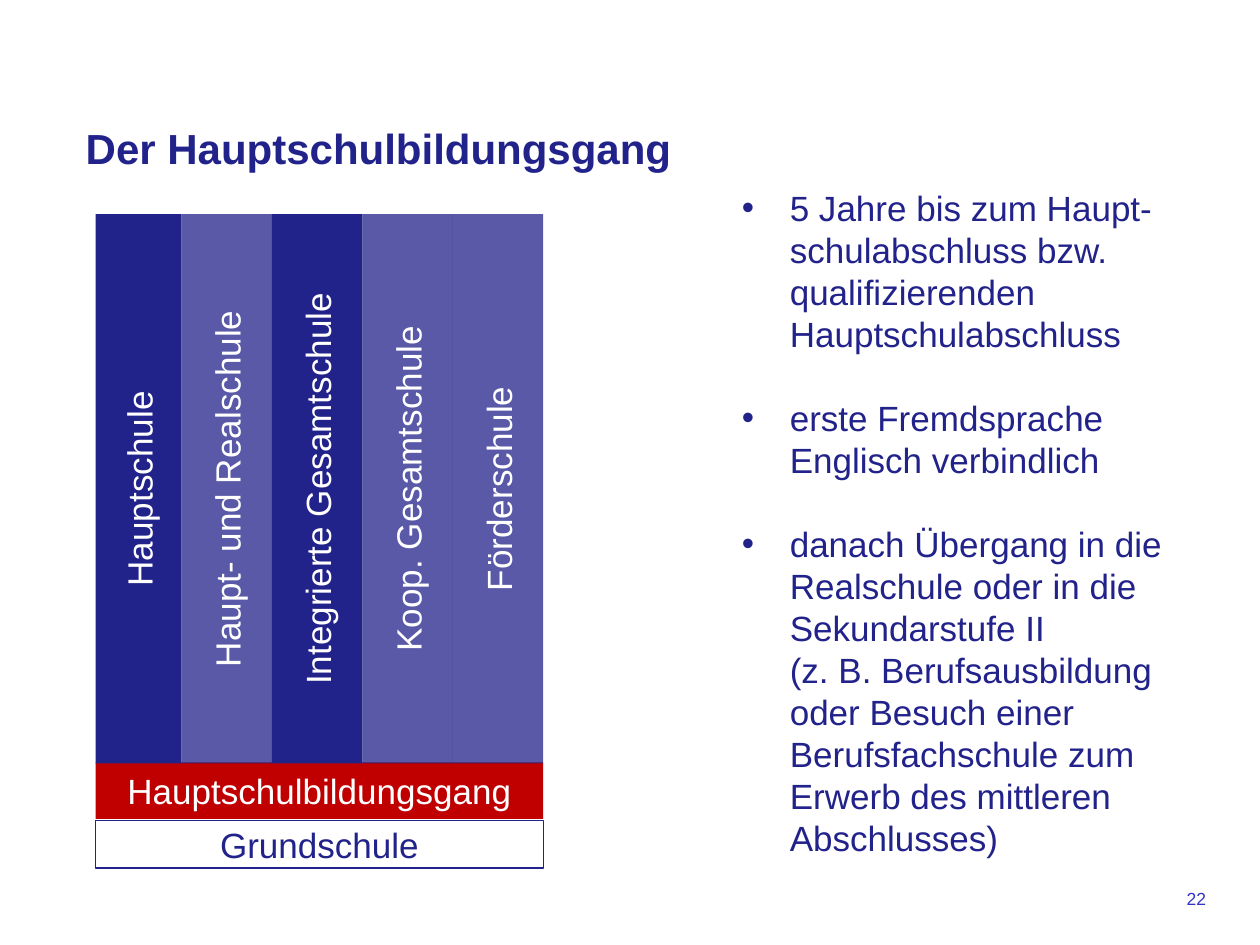
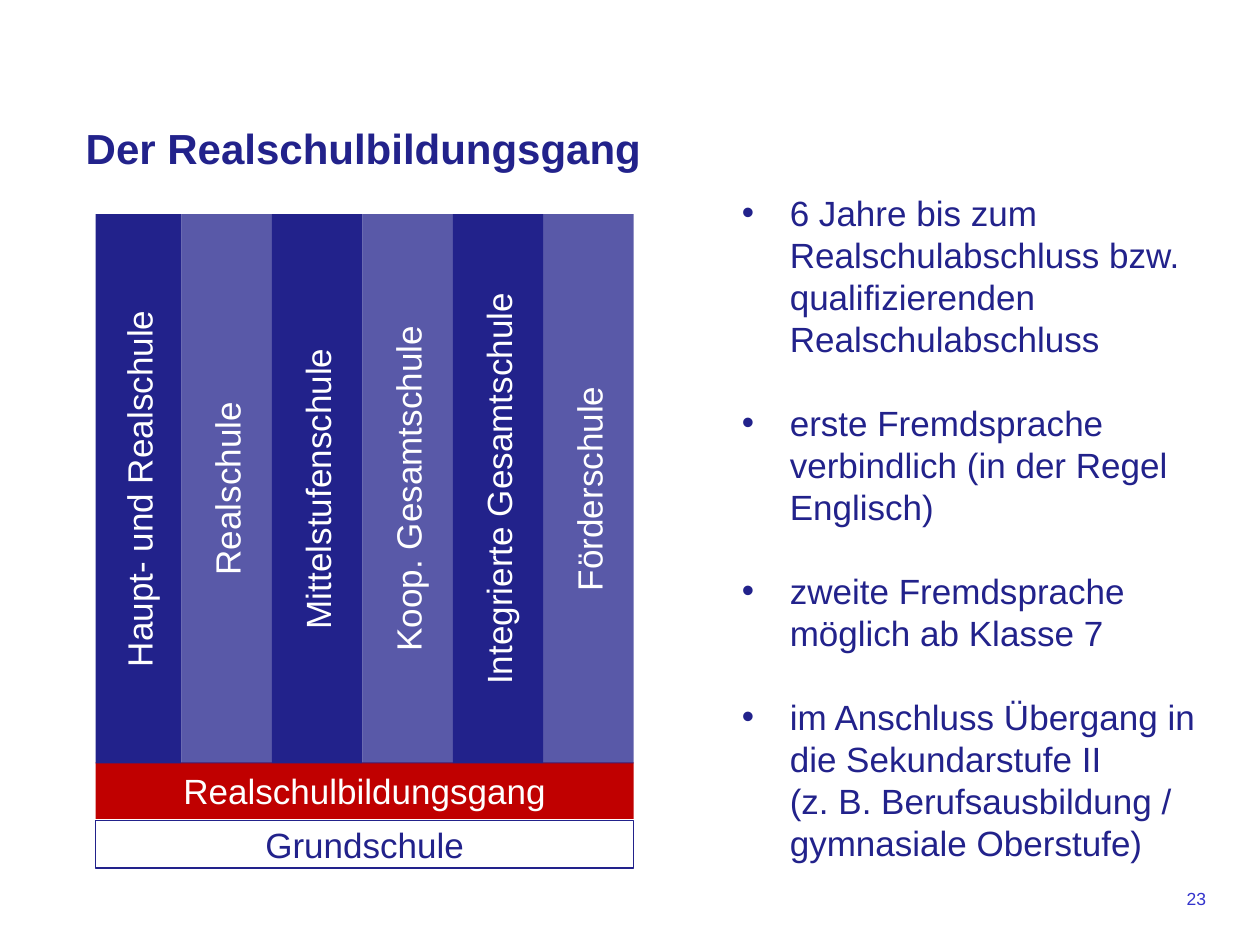
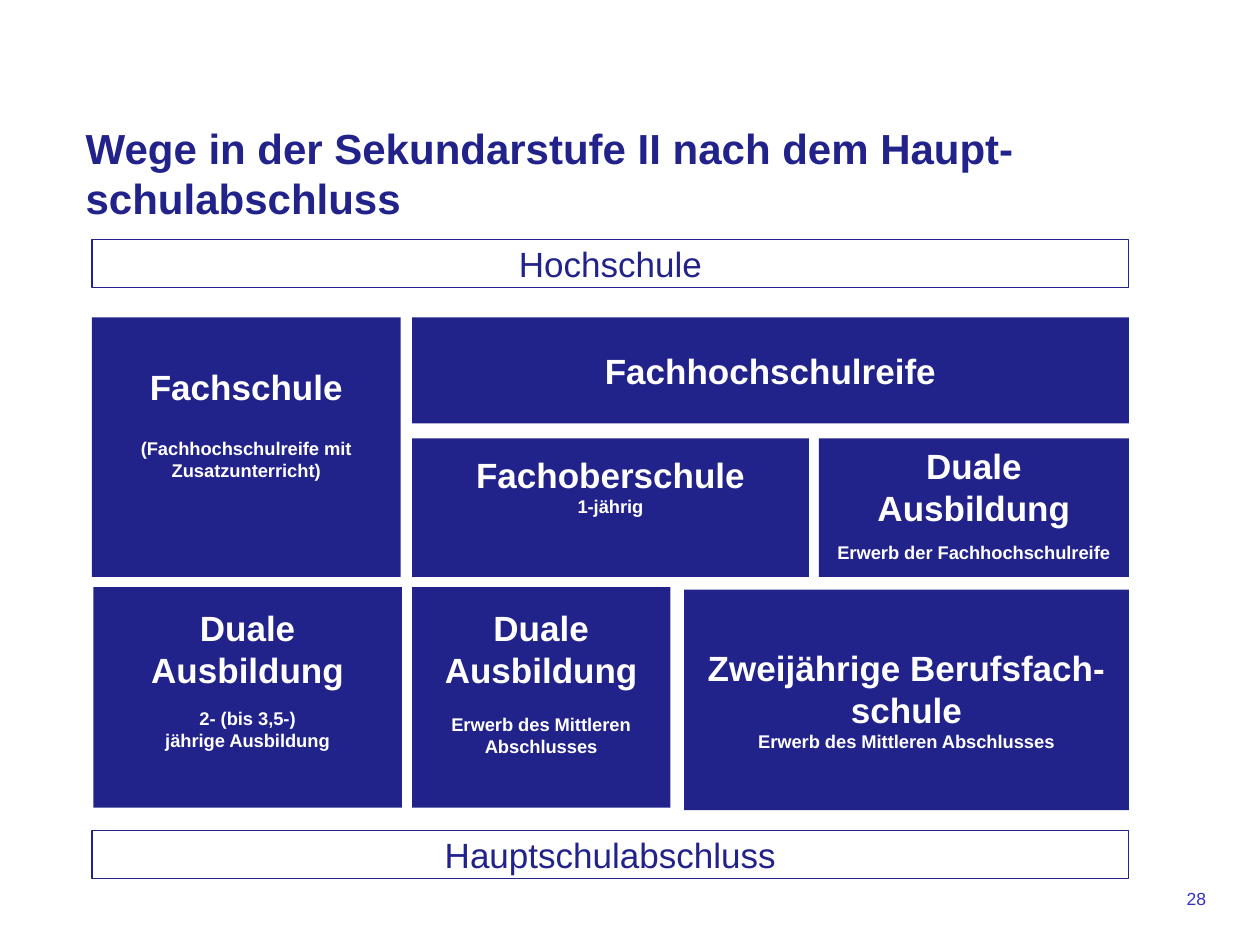
"""Build three slides on German secondary school courses and the paths after them."""

from dataclasses import dataclass

from lxml.etree import SubElement
from pptx import Presentation
from pptx.dml.color import RGBColor
from pptx.enum.shapes import MSO_SHAPE
from pptx.enum.text import MSO_ANCHOR as Anchor, MSO_AUTO_SIZE as AutoSize, PP_ALIGN as Align
from pptx.oxml.ns import qn
from pptx.util import Inches, Pt

NAVY = RGBColor(0x22, 0x22, 0x8B)
RED = RGBColor(0xC0, 0x00, 0x00)
WHITE = RGBColor(0xFF, 0xFF, 0xFF)
NUMBER_BLUE = RGBColor(0x33, 0x33, 0xCC)

FONT_NAME = "Arial"
LINE_FACTOR = 1.2
TITLE_SIZE = 24
BODY_SIZE = 20
DETAIL_SIZE = 10.5
NUMBER_SIZE = 10

TEXT_INSET = 0.05
BULLET_INDENT = 0.38
TOWER_LEFT = 0.76
COLUMN_TOP = 1.7
COLUMN_HEIGHT = 4.36
FIRST_COLUMN_WIDTH = 0.68
COLUMN_WIDTH = (4.27 - FIRST_COLUMN_WIDTH) / 5
LIGHT_OPACITY = 75


@dataclass(frozen=True)
class Area:
    """A rectangle on the slide, in inches."""

    left: float
    top: float
    width: float
    height: float

    def lengths(self) -> tuple:
        """Return the four measures as lengths."""
        return tuple(Inches(n) for n in (self.left, self.top, self.width, self.height))


@dataclass(frozen=True)
class Course:
    """A school course: its school types as columns, and its key facts."""

    number: str
    title: str
    name: str
    schools: tuple[str, ...]
    solid_columns: tuple[int, ...]
    facts: tuple[str, ...]
    facts_area: Area
    facts_framed: bool


@dataclass(frozen=True)
class Stage:
    """A box of the path chart; offset and gap are points above heading and details."""

    area: Area
    heading: str
    details: tuple[str, ...] = ()
    offset: float | None = None
    gap: float = 0


COURSES = (
    Course(
        "22",
        "Der Hauptschulbildungsgang",
        "Hauptschulbildungsgang",
        ("Hauptschule", "Haupt- und Realschule", "Integrierte Gesamtschule",
         "Koop. Gesamtschule", "Förderschule"),
        (0, 2),
        (
            "5 Jahre bis zum Haupt-schulabschluss bzw. qualifizierenden Hauptschulabschluss",
            "erste Fremdsprache Englisch verbindlich",
            "danach Übergang in die Realschule oder in die Sekundarstufe II \n"
            "(z. B. Berufsausbildung oder Besuch einer Berufsfachschule zum Erwerb "
            "des mittleren Abschlusses)",
        ),
        Area(5.79, 1.47, 3.86, 5.35),
        True,
    ),
    Course(
        "23",
        "Der Realschulbildungsgang",
        "Realschulbildungsgang",
        ("Haupt- und Realschule", "Realschule", "Mittelstufenschule",
         "Koop. Gesamtschule", "Integrierte Gesamtschule", "Förderschule"),
        (0, 2, 4),
        (
            "6 Jahre bis zum Realschulabschluss bzw. qualifizierenden Realschulabschluss",
            "erste Fremdsprache verbindlich (in der Regel Englisch)",
            "zweite Fremdsprache möglich ab Klasse 7",
            "im Anschluss Übergang in die Sekundarstufe II \n"
            "(z. B. Berufsausbildung / gymnasiale Oberstufe)",
        ),
        Area(5.79, 1.47, 3.86, 5.49),
        False,
    ),
)

STAGES = (
    Stage(Area(0.73, 2.52, 2.45, 2.06), "Fachschule",
          ("(Fachhochschulreife mit Zusatzunterricht)",), 24, 16.8),
    Stage(Area(3.27, 2.52, 5.69, 0.84), "Fachhochschulreife"),
    Stage(Area(3.27, 3.48, 3.15, 1.1), "Fachoberschule", ("1-jährig",), 4.8),
    Stage(Area(6.5, 3.48, 2.46, 1.1), "Duale Ausbildung",
          ("Erwerb der Fachhochschulreife",), 0, 7.2),
    Stage(Area(0.74, 4.66, 2.45, 1.75), "Duale Ausbildung",
          ("2- (bis 3,5-)", "jährige Ausbildung"), 7.2, 9.6),
    Stage(Area(3.27, 4.66, 2.05, 1.75), "Duale Ausbildung",
          ("Erwerb des Mittleren Abschlusses",), 7.2, 13.2),
    Stage(Area(5.43, 4.68, 3.53, 1.75), "Zweijährige Berufsfach-schule",
          ("Erwerb des Mittleren Abschlusses",), 28.8),
)

PATH_ENDS = (
    (Area(0.73, 1.9, 8.23, 0.38), "Hochschule"),
    (Area(0.73, 6.59, 8.23, 0.38), "Hauptschulabschluss"),
)


def write(paragraph, text: str, size: float, color: RGBColor, bold: bool = False,
          align: Align = Align.LEFT, space_before: float = 0) -> None:
    """Write text into a paragraph, one run for each line."""
    paragraph.alignment = align
    paragraph.line_spacing = Pt(size * LINE_FACTOR)
    paragraph.space_before = Pt(space_before)
    for index, line in enumerate(text.split("\n")):
        if index:
            paragraph.add_line_break()
        run = paragraph.add_run()
        run.text = line
        run.font.name = FONT_NAME
        run.font.size = Pt(size)
        run.font.bold = bold
        run.font.color.rgb = color


def add_box(shapes, area: Area, fill: RGBColor, line: RGBColor | None = None,
            line_width: float = 0.75):
    """Add a filled rectangle whose text is centred vertically."""
    box = shapes.add_shape(MSO_SHAPE.RECTANGLE, *area.lengths())
    box.shadow.inherit = False
    box.fill.solid()
    box.fill.fore_color.rgb = fill
    if line is None:
        box.line.fill.background()
    else:
        box.line.color.rgb = line
        box.line.width = Pt(line_width)
    box.text_frame.word_wrap = True
    box.text_frame.vertical_anchor = Anchor.MIDDLE
    return box


def add_label(shapes, area: Area, text: str, fill: RGBColor, color: RGBColor,
              line: RGBColor | None = None):
    """Add a rectangle with one centred label."""
    box = add_box(shapes, area, fill, line)
    write(box.text_frame.paragraphs[0], text, BODY_SIZE, color, align=Align.CENTER)
    return box


def add_titled_slide(presentation, title: str, number: str):
    """Add a slide with its title and page number."""
    slide = presentation.slides.add_slide(presentation.slide_layouts[5])
    heading = slide.shapes.title
    heading.left, heading.top, heading.width, heading.height = Area(0.58, 0.92, 8.5, 1.25).lengths()
    frame = heading.text_frame
    frame.word_wrap = True
    frame.auto_size = AutoSize.NONE
    frame.vertical_anchor = Anchor.TOP
    write(frame.paragraphs[0], title, TITLE_SIZE, NAVY, bold=True)

    footer = slide.shapes.add_textbox(*Area(7.17, 7, 2.5, 0.33).lengths())
    footer.text_frame.word_wrap = True
    write(footer.text_frame.paragraphs[0], number, NUMBER_SIZE, NUMBER_BLUE, align=Align.RIGHT)
    return slide


def add_column(shapes, area: Area, school: str, solid: bool) -> None:
    """Add a school column with upward text, see-through unless solid."""
    column = add_label(shapes, area, school, NAVY, WHITE)
    column.text_frame._txBody.bodyPr.set("vert", "vert270")
    if not solid:
        color = column._element.spPr.find(qn("a:solidFill")).find(qn("a:srgbClr"))
        SubElement(color, qn("a:alpha")).set("val", str(LIGHT_OPACITY * 1000))


def add_tower(slide, course: Course) -> None:
    """Add the school columns standing on the course and the primary school."""
    shapes = slide.shapes.add_group_shape().shapes
    width = FIRST_COLUMN_WIDTH + COLUMN_WIDTH * (len(course.schools) - 1)
    add_label(shapes, Area(TOWER_LEFT, 6.51, width, 0.38), "Grundschule", WHITE, NAVY, NAVY)
    add_label(shapes, Area(TOWER_LEFT, 6.05, width, 0.45), course.name, RED, WHITE)
    left = TOWER_LEFT
    for index, school in enumerate(course.schools):
        column_width = COLUMN_WIDTH if index else FIRST_COLUMN_WIDTH
        area = Area(left, COLUMN_TOP, column_width, COLUMN_HEIGHT)
        add_column(shapes, area, school, index in course.solid_columns)
        left += column_width


def add_facts(slide, course: Course) -> None:
    """Add the bulleted facts beside the tower."""
    if course.facts_framed:
        frame = add_box(slide.shapes, course.facts_area, WHITE, WHITE, 3).text_frame
    else:
        frame = slide.shapes.add_textbox(*course.facts_area.lengths()).text_frame
        frame.word_wrap = True
    for index, fact in enumerate(course.facts):
        paragraph = frame.add_paragraph() if index else frame.paragraphs[0]
        properties = paragraph._p.get_or_add_pPr()
        properties.set("marL", str(Inches(BULLET_INDENT)))
        properties.set("indent", str(-Inches(BULLET_INDENT)))
        SubElement(properties, qn("a:buFont")).set("typeface", FONT_NAME)
        SubElement(properties, qn("a:buChar")).set("char", "•")
        gap = BODY_SIZE * LINE_FACTOR if index else 0
        write(paragraph, fact, BODY_SIZE, NAVY, space_before=gap)


def add_stage(slide, stage: Stage) -> None:
    """Add a stage box with a bold heading and small details."""
    frame = add_box(slide.shapes, stage.area, NAVY).text_frame
    if stage.offset is not None:
        frame.vertical_anchor = Anchor.TOP
        frame.margin_top = Inches(TEXT_INSET) + Pt(stage.offset)
    write(frame.paragraphs[0], stage.heading, BODY_SIZE, WHITE, True, Align.CENTER)
    for index, detail in enumerate(stage.details):
        gap = 0 if index else stage.gap
        write(frame.add_paragraph(), detail, DETAIL_SIZE, WHITE, True, Align.CENTER, gap)


def add_course_slide(presentation, course: Course) -> None:
    """Add the slide of one school course."""
    slide = add_titled_slide(presentation, course.title, course.number)
    add_facts(slide, course)
    add_tower(slide, course)


def add_path_slide(presentation) -> None:
    """Add the slide with the paths through upper secondary level."""
    title = "Wege in der Sekundarstufe II nach dem Haupt-schulabschluss"
    slide = add_titled_slide(presentation, title, "28")
    for stage in STAGES:
        add_stage(slide, stage)
    for area, text in PATH_ENDS:
        add_label(slide.shapes, area, text, WHITE, NAVY, NAVY)


def main() -> None:
    """Build and save the presentation."""
    presentation = Presentation()
    presentation.slide_width = Inches(10)
    presentation.slide_height = Inches(7.5)
    for course in COURSES:
        add_course_slide(presentation, course)
    add_path_slide(presentation)
    presentation.save("out.pptx")


if __name__ == "__main__":
    main()
